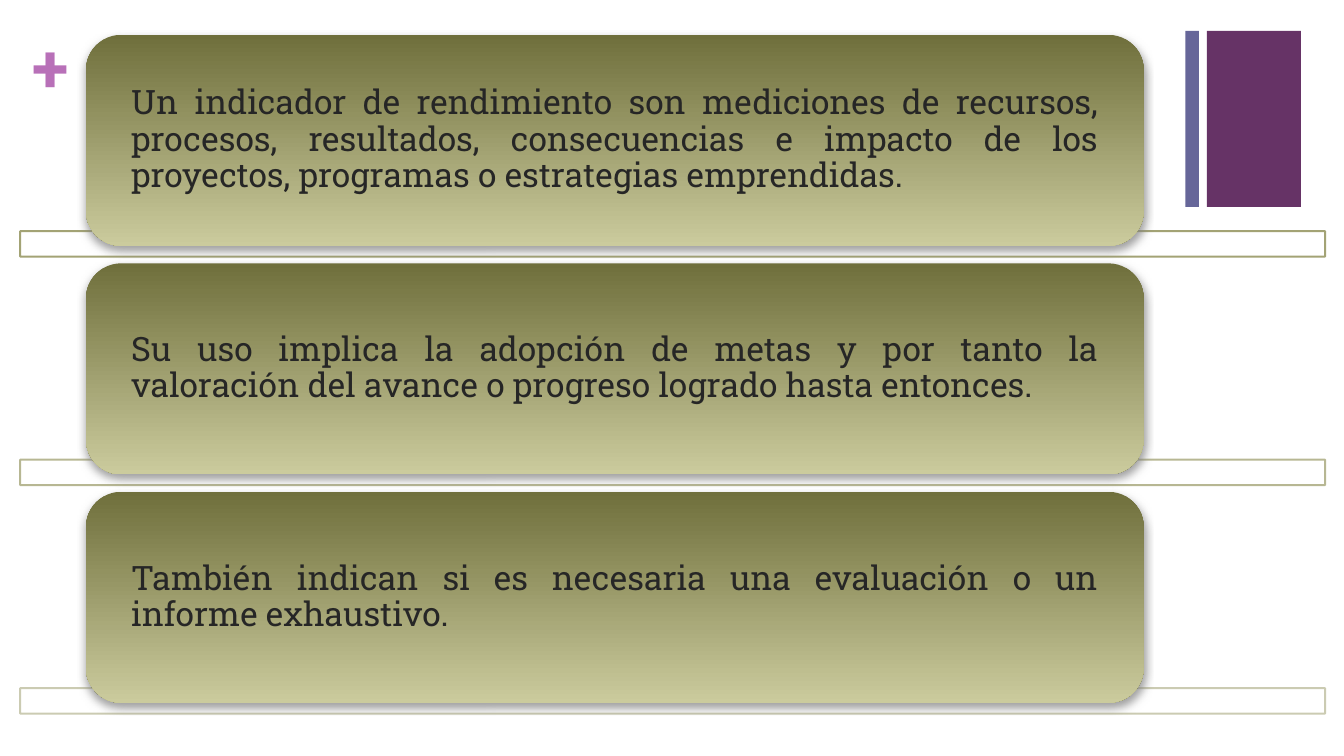
import pptx
import pptx.dml.color
import pptx.enum.shapes
import pptx.enum.text
import pptx.oxml
import pptx.oxml.ns
import pptx.util
from pptx.util import Inches

RGBColor = pptx.dml.color.RGBColor
Shapes = pptx.enum.shapes.MSO_SHAPE
Align = pptx.enum.text.PP_ALIGN
Anchor = pptx.enum.text.MSO_ANCHOR

PURPLE = RGBColor(0x66, 0x33, 0x66)
SLATE = RGBColor(0x66, 0x66, 0x99)
ORCHID = RGBColor(0xB8, 0x70, 0xB8)
OLIVE = RGBColor(0x99, 0x99, 0x66)
DARK_OLIVE = RGBColor(0x6F, 0x6F, 0x3C)
LIGHT_OLIVE = RGBColor(0xCB, 0xCB, 0x9D)
WHITE = RGBColor(0xFF, 0xFF, 0xFF)
INK = RGBColor(0x26, 0x26, 0x26)
GREY = RGBColor(0x80, 0x80, 0x80)

# Text and opacity (%) of the line of the bar behind it
CARDS = [
    ("Un indicador de rendimiento son mediciones de recursos, procesos, "
     "resultados, consecuencias e impacto de los proyectos, programas o "
     "estrategias emprendidas.", 90),
    ("Su uso implica la adopción de metas y por tanto la valoración del "
     "avance o progreso logrado hasta entonces.", 70),
    ("También indican si es necesaria una evaluación o un informe "
     "exhaustivo.", 50),
]
FIRST_TOP, STEP, BAR_OFFSET = 0.26, 1.7, 1.46


class SlideBuilder:
    def __init__(self, slide, font):
        self.s = slide
        self.font = font

    def shape(self, kind, box, fill=None):
        sp = self.s.shapes.add_shape(kind, *map(Inches, box))
        sp.shadow.inherit = False
        sp.line.fill.background()
        if fill is not None:
            sp.fill.solid()
            sp.fill.fore_color.rgb = fill
        return sp

    def text(self, sp, text, frame, para, font, color):
        tf = sp.text_frame
        p = tf.paragraphs[0]
        r = p.add_run()
        r.text = text
        r.font.color.rgb = color
        font = {"name": self.font, **font}
        for target, values in ((tf, frame), (p, para), (r.font, font)):
            for name, value in values.items():
                setattr(target, name, value)

    def plus(self, box):
        sp = self.s.shapes.add_textbox(*map(Inches, box))
        frame = dict(margin_left=0, margin_top=0, margin_right=0,
                     margin_bottom=0, word_wrap=False)
        self.text(sp, "+", frame, {},
                  dict(size=pptx.util.Pt(36), bold=True), ORCHID)

    def bar(self, box, line_opacity):
        sp = self.shape(Shapes.RECTANGLE, box, WHITE)
        sp.line.color.rgb = OLIVE
        sp.line.width = pptx.util.Pt(1)
        colors = sp.element.spPr.iter(pptx.oxml.ns.qn("a:srgbClr"))
        for color, opacity in zip(list(colors), (90, line_opacity)):
            add_alpha(color, opacity)

    def card(self, box, text):
        sp = self.shape(Shapes.ROUNDED_RECTANGLE, box)
        sp.fill.gradient()
        sp.fill.gradient_angle = 270
        for stop, color in zip(sp.fill.gradient_stops,
                               (DARK_OLIVE, LIGHT_OLIVE)):
            stop.color.rgb = color
        add_shadow(sp)
        frame = dict(margin_left=Inches(0.26), margin_right=Inches(0.26),
                     margin_top=0, margin_bottom=0, word_wrap=True,
                     vertical_anchor=Anchor.MIDDLE)
        para = dict(alignment=Align.JUSTIFY, line_spacing=0.9)
        self.text(sp, text, frame, para, dict(size=pptx.util.Pt(18)), INK)


def add_alpha(color, percent):
    alpha = color.makeelement(pptx.oxml.ns.qn("a:alpha"),
                              {"val": str(percent * 1000)})
    color.append(alpha)


def add_shadow(sp):
    """Soft grey shadow falling straight down."""
    effects = sp.element.spPr.find(pptx.oxml.ns.qn("a:effectLst"))
    effects.append(pptx.oxml.parse_xml(
        f'<a:outerShdw {pptx.oxml.ns.nsdecls("a")} blurRad="{pptx.util.Pt(5)}" '
        f'dist="{pptx.util.Pt(2)}" dir="5400000" rotWithShape="0">'
        f'<a:srgbClr val="{GREY}"><a:alpha val="75000"/></a:srgbClr>'
        '</a:outerShdw>'))


def main():
    prs = pptx.Presentation()
    prs.slide_width, prs.slide_height = Inches(10), Inches(10 * 9 / 16)
    s = prs.slides.add_slide(prs.slide_layouts[6])
    builder = SlideBuilder(s, "Roboto Slab")

    builder.shape(Shapes.RECTANGLE, (8.98, 0.23, 0.7, 1.31), PURPLE)
    builder.plus((0.24, 0.19, 0.29, 0.61))
    builder.shape(Shapes.RECTANGLE, (8.82, 0.23, 0.1, 1.31), SLATE)
    for i, (text, opacity) in enumerate(CARDS):
        top = FIRST_TOP + i * STEP
        builder.bar((0.15, top + BAR_OFFSET, 9.71, 0.19), opacity)
        builder.card((0.64, top, 7.87, 1.57), text)
    prs.save("out.pptx")


if __name__ == "__main__":
    main()
